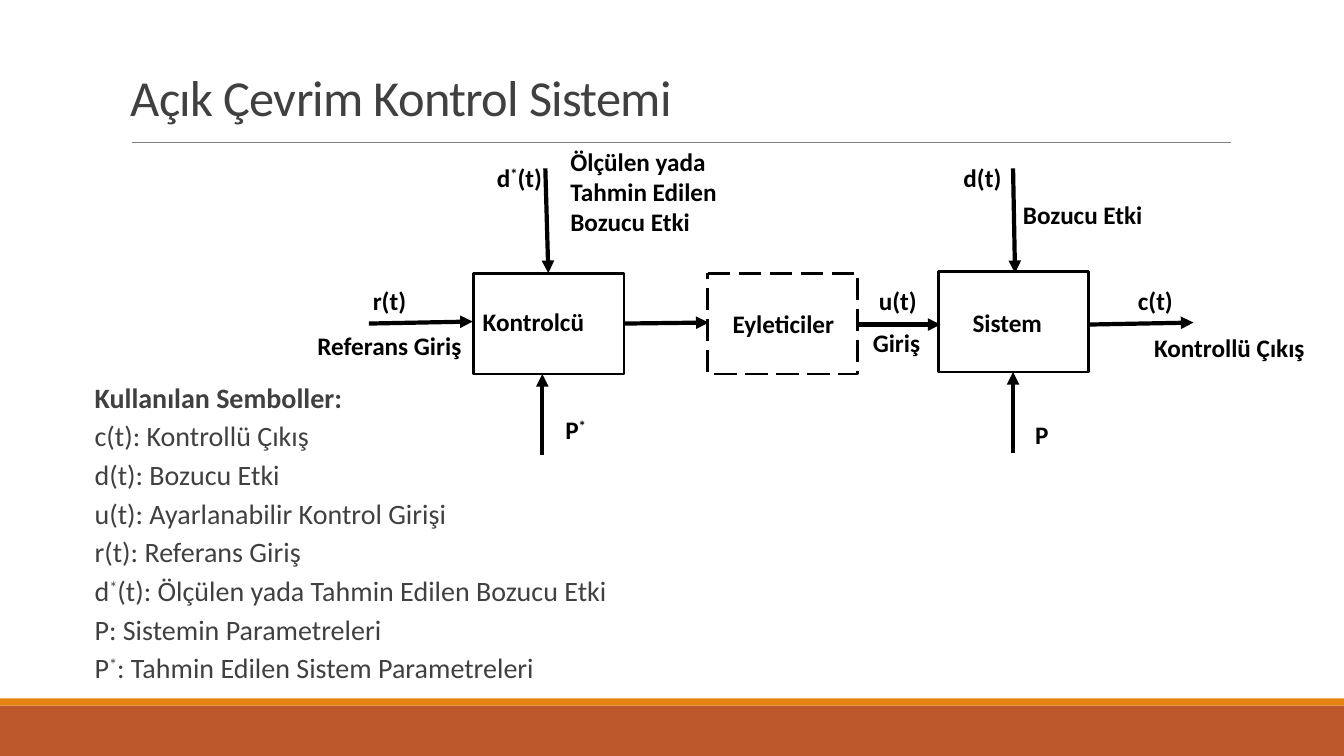
from pptx import Presentation
from pptx.util import Inches, Pt
from pptx.dml.color import RGBColor
from pptx.enum.dml import MSO_LINE
from pptx.enum.shapes import MSO_CONNECTOR, MSO_SHAPE
from pptx.enum.text import MSO_ANCHOR
from pptx.oxml.ns import qn
from lxml.etree import SubElement

COLORS = {"ink": "000000", "text": "404040", "rule": "808080",
          "paper": "FFFFFF", "rust": "BD582C", "amber": "E48312"}
CELL = Inches(0.1)  # the slide is a grid of 133.33 by 75 cells
WIDE, HIGH = 133.33, 75


def cells(*counts):
    return [round(count * CELL) for count in counts]


def write(home, lines, box, size=18, color="ink", bold=True, head=False, side=1,
          anchor=MSO_ANCHOR.TOP, space=None, before=0, after=0, track=0):
    """Write lines into a text box; each * is raised, head makes only line one bold."""
    frame = home.add_textbox(*cells(*box)).text_frame
    frame.word_wrap = True
    frame.vertical_anchor = anchor
    frame.margin_left, frame.margin_right = cells(1, side)
    for row, line in enumerate(lines):
        para = frame.add_paragraph() if row else frame.paragraphs[0]
        para.line_spacing = space
        para.space_before = Pt(12 if head and row == 0 else before)
        para.space_after = Pt(after)
        for part in line.replace("*", "|*|").split("|"):
            if not part:
                continue
            run = para.add_run()
            run.text = part
            font = run.font
            font.name, font.size = "Calibri", Pt(size)
            font.bold = row == 0 if head else bold
            font.color.rgb = RGBColor.from_string(COLORS[color])
            props = run._r.get_or_add_rPr()
            if part == "*":
                props.set("baseline", "30000")
            if track:
                props.set("spc", str(track))


def link(home, ends, color="ink", width=3, arrow=True):
    """Draw a line between two grid points."""
    line = home.add_connector(MSO_CONNECTOR.STRAIGHT, *cells(*ends))
    line.line.color.rgb = RGBColor.from_string(COLORS[color])
    line.line.width = Pt(width)
    if arrow:
        SubElement(line.line._get_or_add_ln(), qn("a:tailEnd"), type="triangle")
    SubElement(line._element.spPr, qn("a:effectLst"))


deck = Presentation()
deck.slide_width, deck.slide_height = cells(WIDE, HIGH)
slide = deck.slides.add_slide(deck.slide_layouts[6])
shapes = slide.shapes

# Footer bands
for top, tall, color in [(70, 5, "rust"), (69.3, 0.7, "amber")]:
    band = shapes.add_shape(MSO_SHAPE.RECTANGLE, *cells(0, top, WIDE, tall))
    band.shadow.inherit = False
    band.fill.solid()
    band.fill.fore_color.rgb = RGBColor.from_string(COLORS[color])
    band.line.fill.background()

# Title and rule
link(shapes, (13.1, 14.1, 122.1, 14.1), color="rule", width=0.5, arrow=False)
write(shapes, ["Açık Çevrim Kontrol Sistemi"], (12, 3.1, 110, 10), size=36,
      color="text", bold=False, anchor=MSO_ANCHOR.BOTTOM, space=0.85, track=-50)

# Symbol list
write(shapes, ["Kullanılan Semboller:",
               "c(t): Kontrollü Çıkış",
               "d(t): Bozucu Etki",
               "u(t): Ayarlanabilir Kontrol Girişi",
               "r(t): Referans Giriş",
               "d*(t): Ölçülen yada Tahmin Edilen Bozucu Etki",
               "P: Sistemin Parametreleri",
               "P*: Tahmin Edilen Sistem Parametreleri"],
      (8.4, 37.6, 54.7, 30.8), size=20, color="text", head=True, side=0,
      space=0.9, before=4, after=2)

# Blocks of the diagram
chart = shapes.add_group_shape().shapes
for left, top, dash in [(47, 27.1, None), (70.2, 27.1, MSO_LINE.LONG_DASH),
                        (93.1, 26.9, None)]:
    block = chart.add_shape(MSO_SHAPE.FLOWCHART_PROCESS, *cells(left, top, 14.9, 10))
    block.shadow.inherit = False
    block.fill.solid()
    block.fill.fore_color.rgb = RGBColor.from_string(COLORS["paper"])
    block.line.color.rgb = RGBColor.from_string(COLORS["ink"])
    block.line.width = Pt(2)
    if dash:
        block.line.dash_style = dash

# Signal arrows: along the chain, from above, from below
for ends in [(36.6, 32.1, 46.9, 31.9), (61.9, 32.1, 70.3, 32),
             (85.1, 32.2, 93.3, 32.2), (108, 32.2, 118.4, 32),
             (54.1, 16.7, 54.4, 27.1), (100.5, 16.7, 100.7, 27.1),
             (53.8, 45.1, 53.8, 37.1), (100.5, 44.9, 100.5, 36.9)]:
    link(chart, ends)

# Labels: block names, signals, meanings, parameters
for text, left, top, width in [
        ("Kontrolcü", 46.9, 29.9, 14.9), ("Eyleticiler", 71.7, 30.1, 14.9),
        ("Sistem", 95.5, 30, 14.9),
        ("r(t)", 36, 27.8, 7.1), ("u(t)", 86.2, 27.8, 7.1),
        ("c(t)", 111.9, 27.8, 7.1), ("d*(t)", 48.3, 15.6, 7.1),
        ("d(t)", 94.6, 15.6, 7.1),
        ("Referans Giriş", 30.5, 32.3, 19.8), ("Giriş", 85.6, 32, 19.8),
        ("Kontrollü Çıkış", 113.5, 32.5, 19.8), ("Bozucu Etki", 100.5, 19.3, 14.6),
        ("Ölçülen yada Tahmin Edilen Bozucu Etki", 55.6, 14, 16.8),
        ("P*", 55.1, 40.6, 8.7), ("P", 101.7, 41.1, 8.7)]:
    write(chart, [text], (left, top, width, 4))

deck.save("out.pptx")
